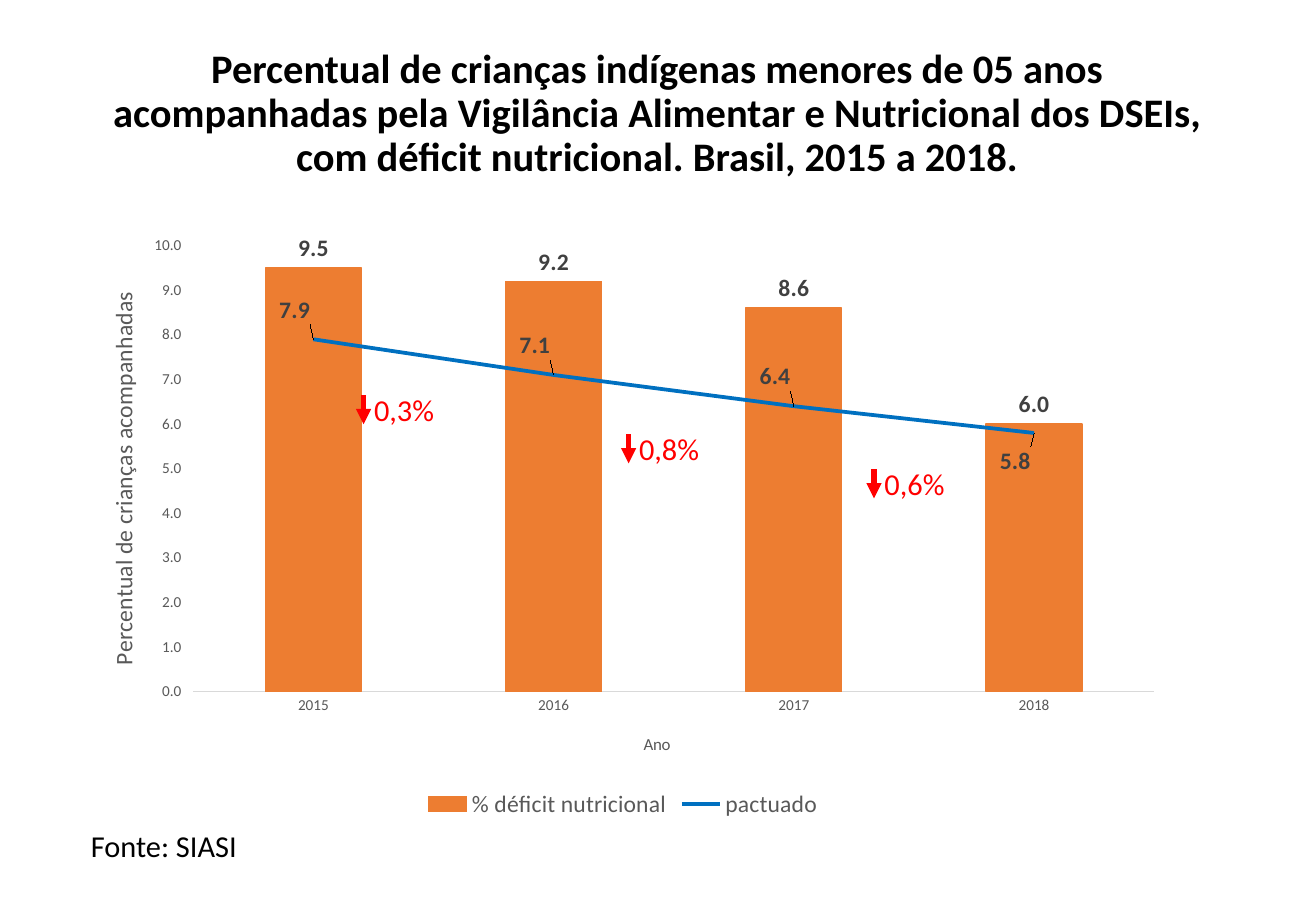
from lxml.etree import SubElement
from pptx import Presentation
from pptx.chart.data import CategoryChartData
from pptx.dml.color import RGBColor
from pptx.enum.chart import XL_CHART_TYPE, XL_LABEL_POSITION, XL_LEGEND_POSITION, XL_MARKER_STYLE, XL_TICK_MARK
from pptx.enum.shapes import MSO_CONNECTOR
from pptx.enum.text import MSO_ANCHOR, MSO_AUTO_SIZE, PP_ALIGN
from pptx.oxml import parse_xml
from pptx.oxml.ns import nsdecls, qn
from pptx.util import Cm, Pt

TITLE = ("Percentual de crianças indígenas menores de 05 anos acompanhadas pela "
         "Vigilância Alimentar e Nutricional dos DSEIs, com déficit nutricional. "
         "Brasil, 2015 a 2018.")
SOURCE = "Fonte: SIASI"
YEARS = ["2015", "2016", "2017", "2018"]
DEFICIT = ("% déficit nutricional", [9.5, 9.2, 8.6, 6.0])
TARGET = ("pactuado", [7.9, 7.1, 6.4, 5.8])
YEAR_TITLE = "Ano"
SHARE_TITLE = "Percentual de crianças acompanhadas"
DROPS = [("0,3%", 7.57, 8.05), ("0,8%", 13.11, 8.87), ("0,6%", 18.24, 9.6)]
COLORS = {"black": "000000", "red": "FF0000", "bar": "ED7D31", "line": "0070C0",
          "gray": "595959", "label": "404040", "axis": "D9D9D9"}
FONT = "Calibri"


def color(name):
    return RGBColor.from_string(COLORS[name])


def style(font, size, tone, bold=False):
    font.name, font.size, font.bold = FONT, Pt(size), bold
    font.color.rgb = color(tone)


def write(frame, text, size=18, tone="black", bold=False, align=None, spacing=None):
    para = frame.paragraphs[0]
    para.alignment, para.line_spacing = align, spacing
    span = para.add_run()
    span.text = text
    style(span.font, size, tone, bold)


def add_text(page, text, left, top, width, wrap=True, **look):
    box = page.shapes.add_textbox(Cm(left), Cm(top), Cm(width), Cm(1.02))
    box.text_frame.word_wrap = wrap
    write(box.text_frame, text, **look)


def set_layout(parent, index, **values):
    for old in parent.findall(qn("c:layout")):
        parent.remove(old)
    layout = parse_xml(f"<c:layout {nsdecls('c')}/>")
    manual = SubElement(layout, qn("c:manualLayout"))
    for tag, value in values.items():
        SubElement(manual, qn(f"c:{tag}")).set("val", str(value))
    parent.insert(index, layout)


def move_to_line_plot(chart):
    bars = chart.plots[0]._element
    target = bars.findall(qn("c:ser"))[1]
    for flag in target.findall(qn("c:invertIfNegative")):
        target.remove(flag)
    plot = parse_xml(f'<c:lineChart {nsdecls("c")}><c:grouping val="standard"/>'
                     '<c:varyColors val="0"/><c:marker val="1"/></c:lineChart>')
    plot.insert(2, target)
    for axis in bars.findall(qn("c:axId")):
        SubElement(plot, qn("c:axId")).set("val", axis.get("val"))
    bars.addnext(plot)


def format_axis(axis, title, size, left, top):
    axis.has_major_gridlines = False
    style(axis.tick_labels.font, 9, "gray")
    axis.has_title = True
    write(axis.axis_title.text_frame, title, size=size, tone="gray")
    set_layout(axis.axis_title._element, 1, xMode="edge", yMode="edge", x=left, y=top)


def add_deficit_chart(page):
    data = CategoryChartData(number_format="0.0")
    data.categories = YEARS
    for name, values in (DEFICIT, TARGET):
        data.add_series(name, values)
    chart = page.shapes.add_chart(XL_CHART_TYPE.COLUMN_CLUSTERED, Cm(1.45), Cm(4.7),
                                  Cm(23.14), Cm(12.52), data).chart
    move_to_line_plot(chart)
    chart.has_title = False
    style(chart.font, 10, "black")
    set_layout(chart._chartSpace.chart.plotArea, 0, layoutTarget="inner",
               xMode="edge", yMode="edge", x=0.112, y=0.035, w=0.868, h=0.745)

    years, share = chart.category_axis, chart.value_axis
    format_axis(years, YEAR_TITLE, 10, 0.516, 0.845)
    format_axis(share, SHARE_TITLE, 14, 0.03, 0.105)
    years.major_tick_mark = XL_TICK_MARK.NONE
    years.format.line.color.rgb = color("axis")
    years.format.line.width = Pt(0.75)
    share.minimum_scale, share.maximum_scale, share.major_unit = 0, 10, 1
    share.tick_labels.number_format = "0.0"
    share.tick_labels.number_format_is_linked = False
    share.format.line.fill.background()

    chart.has_legend = True
    chart.legend.position = XL_LEGEND_POSITION.BOTTOM
    chart.legend.include_in_layout = False
    style(chart.legend.font, 14, "gray")

    bar_plot, line_plot = chart.plots
    bar_plot.gap_width = 150
    bar_plot.vary_by_categories = False
    bars, line = bar_plot.series[0], line_plot.series[0]
    bars.format.fill.solid()
    bars.format.fill.fore_color.rgb = color("bar")
    bars.format.line.color.rgb = color("bar")
    bars.format.line.width = Pt(0.75)
    line.format.line.color.rgb = color("line")
    line.format.line.width = Pt(2.25)
    line.marker.style = XL_MARKER_STYLE.NONE
    line.smooth = False
    for series, position in ((bars, XL_LABEL_POSITION.OUTSIDE_END), (line, XL_LABEL_POSITION.ABOVE)):
        series.data_labels.show_value = True
        series.data_labels.position = position
        style(series.data_labels.font, 14, "label", bold=True)
    last = len(YEARS) - 1
    for index in range(len(YEARS)):
        label = line.points[index].data_label
        style(label.font, 14, "label", bold=True)
        label.position = XL_LABEL_POSITION.BELOW if index == last else XL_LABEL_POSITION.ABOVE
        element = line.data_labels._element.findall(qn("c:dLbl"))[index]
        set_layout(element, 1, x=-0.017, y=0.015 if index == last else -0.017)


def add_drop(page, text, left, top):
    add_text(page, text, left, top, 1.78, tone="red")
    x, y = left + 0.03, top + 0.21
    arrow = page.shapes.add_connector(MSO_CONNECTOR.STRAIGHT, Cm(x), Cm(y), Cm(x), Cm(y + 0.61))
    arrow.line.color.rgb = color("red")
    arrow.line.width = Pt(3)
    SubElement(arrow.line._get_or_add_ln(), qn("a:tailEnd")).set("type", "triangle")
    SubElement(arrow._element.spPr, qn("a:effectLst"))


def main():
    deck = Presentation()
    deck.slide_width, deck.slide_height = Cm(27.51), Cm(19.05)
    page = deck.slides.add_slide(deck.slide_layouts[5])
    title = page.shapes.title
    title.left, title.top, title.width, title.height = Cm(1.88), Cm(1.02), Cm(23.72), Cm(3.68)
    frame = title.text_frame
    frame.auto_size = MSO_AUTO_SIZE.NONE
    frame.vertical_anchor = MSO_ANCHOR.TOP
    frame.margin_top = 0
    write(frame, TITLE, size=24, bold=True, align=PP_ALIGN.CENTER, spacing=0.9)
    add_deficit_chart(page)
    add_text(page, SOURCE, 1.65, 17.17, 3.61, wrap=False)
    for drop in DROPS:
        add_drop(page, *drop)
    deck.save("out.pptx")


if __name__ == "__main__":
    main()
